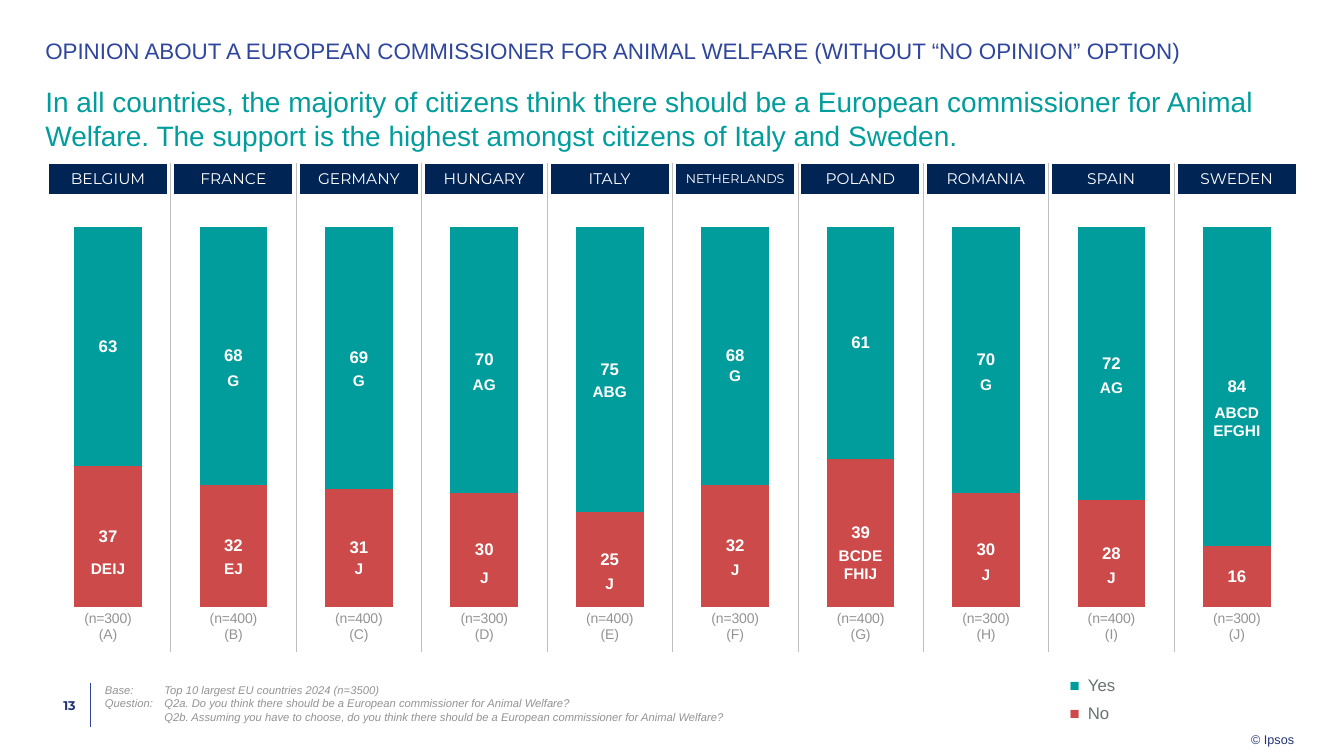
from lxml import etree
from pptx import Presentation
from pptx.chart.data import CategoryChartData
from pptx.dml.color import RGBColor
from pptx.enum.chart import XL_CHART_TYPE, XL_LABEL_POSITION, XL_TICK_LABEL_POSITION, XL_TICK_MARK
from pptx.enum.shapes import MSO_CONNECTOR
from pptx.enum.text import MSO_ANCHOR, PP_ALIGN
from pptx.oxml import parse_xml
from pptx.oxml.ns import nsdecls, qn
from pptx.util import Inches, Pt

STACKED = XL_CHART_TYPE.COLUMN_STACKED
LABEL_CENTER = XL_LABEL_POSITION.CENTER
NO_LABELS = XL_TICK_LABEL_POSITION.NONE
NO_TICK = XL_TICK_MARK.NONE
STRAIGHT = MSO_CONNECTOR.STRAIGHT
TOP, MIDDLE = MSO_ANCHOR.TOP, MSO_ANCHOR.MIDDLE
LEFT, CENTER, RIGHT = PP_ALIGN.LEFT, PP_ALIGN.CENTER, PP_ALIGN.RIGHT

WHITE = RGBColor(0xFF, 0xFF, 0xFF)
TEAL = RGBColor(0x00, 0x9D, 0x9C)
RED = RGBColor(0xCC, 0x4A, 0x4A)
NAVY = RGBColor(0x00, 0x25, 0x54)
INDIGO = RGBColor(0x23, 0x34, 0x75)
BLUE = RGBColor(0x2F, 0x46, 0x9C)
GREY = RGBColor(0x93, 0x93, 0x93)
SLATE = RGBColor(0x69, 0x72, 0x72)
RULE = RGBColor(0xBF, 0xBF, 0xBF)

# Country, sample size, yes %, no %, and (top, lines) of the significance letters
COUNTRIES = [
    ("BELGIUM", 300, 63, 37, None, (5.54, ["DEIJ"])),
    ("FRANCE", 400, 68, 32, (3.68, ["G"]), (5.54, ["EJ"])),
    ("GERMANY", 400, 69, 31, (3.68, ["G"]), (5.54, ["J"])),
    ("HUNGARY", 300, 70, 30, (3.72, ["AG"]), (5.63, ["J"])),
    ("ITALY", 400, 75, 25, (3.79, ["ABG"]), (5.69, ["J"])),
    ("NETHERLANDS", 300, 68, 32, (3.63, ["G"]), (5.55, ["J"])),
    ("POLAND", 400, 61, 39, None, (5.41, ["BCDE", "FHIJ"])),
    ("ROMANIA", 300, 70, 30, (3.72, ["G"]), (5.6, ["J"])),
    ("SPAIN", 400, 72, 28, (3.75, ["AG"]), (5.63, ["J"])),
    ("SWEDEN", 300, 84, 16, (3.99, ["ABCD", "EFGHI"]), None),
]
MARGIN, WIDTH = 0.45, 12.44
COL_W = WIDTH / len(COUNTRIES)


def style_font(font, size, color, name="Arial", **extra):
    font.color.rgb = color
    for attr, value in {"size": Pt(size), "name": name, **extra}.items():
        setattr(font, attr, value)


def fill_text(tf, lines, fmt, align=LEFT, tab=None, line_spacing=None):
    for i, line in enumerate(lines):
        p = tf.paragraphs[0] if i == 0 else tf.add_paragraph()
        p.alignment = align
        if line_spacing:
            p.line_spacing = line_spacing
        if tab:
            tabs = etree.SubElement(p._p.get_or_add_pPr(), qn("a:tabLst"))
            etree.SubElement(tabs, qn("a:tab"), pos=str(Inches(tab)), algn="l")
        r = p.add_run()
        r.text = line
        style_font(r.font, **fmt)


def add_text(slide, box, lines, fmt, insets=(0, 0, 0, 0), anchor=TOP, wrap=True, **para):
    tf = slide.shapes.add_textbox(*map(Inches, box)).text_frame
    tf.word_wrap, tf.vertical_anchor = wrap, anchor
    for side, inset in zip(("left", "top", "right", "bottom"), insets):
        setattr(tf, f"margin_{side}", Inches(inset))
    fill_text(tf, lines, fmt, **para)


def add_line(slide, x, top, bottom, color):
    line = slide.shapes.add_connector(STRAIGHT, *map(Inches, (x, top, x, bottom)))
    line.line.color.rgb, line.line.width = color, Pt(0.5)
    etree.SubElement(line._element.spPr, qn("a:effectLst"))


def add_plain_table(slide, box, rows, cols):
    table = slide.shapes.add_table(rows, cols, *map(Inches, box)).table
    table.first_row = table.horz_banding = False
    return table


def fill_cell(cell, text, fmt, align, side_inset):
    cell.margin_left = cell.margin_right = Inches(side_inset)
    cell.margin_top = cell.margin_bottom = 0
    cell.vertical_anchor = MIDDLE
    fill_text(cell.text_frame, [text], fmt, align)


def add_headings(slide, left, top, width):
    add_text(slide, (left, top, width, 0.42),
             ["OPINION ABOUT A EUROPEAN COMMISSIONER FOR ANIMAL WELFARE (WITHOUT “NO OPINION” OPTION)"],
             dict(size=16, color=BLUE), line_spacing=0.9)
    add_text(slide, (left, top + 0.44, width, 0.79),
             ["In all countries, the majority of citizens think there should be a European commissioner "
              "for Animal Welfare. The support is the highest amongst citizens of Italy and Sweden."],
             dict(size=20, color=TEAL))


def add_chart(slide, box):
    data = CategoryChartData()
    data.categories = [f"(n={row[1]})\n({letter})" for row, letter in zip(COUNTRIES, "ABCDEFGHIJ")]
    data.add_series("No", [row[3] for row in COUNTRIES])
    data.add_series("Yes", [row[2] for row in COUNTRIES])
    chart = slide.shapes.add_chart(STACKED, *map(Inches, box), data).chart
    chart.has_legend = chart.has_title = False
    style_font(chart.font, 10, GREY)
    for axis in (chart.category_axis, chart.value_axis):
        axis.major_tick_mark = axis.minor_tick_mark = NO_TICK
        axis.has_major_gridlines = False
        axis.format.line.fill.background()
    style_font(chart.category_axis.tick_labels.font, 10, GREY)
    chart.value_axis.minimum_scale, chart.value_axis.maximum_scale = 0, 100
    chart.value_axis.tick_label_position = NO_LABELS

    plot = chart.plots[0]
    plot.gap_width, plot.overlap, plot.vary_by_categories = 85, 100, False
    for series, color in zip(plot.series, (RED, TEAL)):
        series.format.fill.solid()
        series.format.fill.fore_color.rgb = color
        labels = series.data_labels
        labels.show_value, labels.position = True, LABEL_CENTER
        labels.number_format, labels.number_format_is_linked = "0;0;", False
        style_font(labels.font, 12, WHITE, bold=True)

    # Plot area spans the full width and leaves a strip for the category labels
    area = chart._chartSpace.chart.plotArea
    for old in area.findall(qn("c:layout")):
        area.remove(old)
    area.insert(0, parse_xml(
        f'<c:layout {nsdecls("c")}><c:manualLayout><c:layoutTarget val="inner"/>'
        '<c:xMode val="edge"/><c:yMode val="edge"/><c:x val="0"/><c:y val="0"/>'
        '<c:w val="1"/><c:h val="0.896"/></c:manualLayout></c:layout>'))


def add_country_header(slide, box):
    table = add_plain_table(slide, box, 1, len(COUNTRIES))
    for cell, row in zip(table.rows[0].cells, COUNTRIES):
        size = 9 if len(row[0]) > 8 else 11
        fill_cell(cell, row[0], dict(size=size, color=WHITE, name="Montserrat"), CENTER, 0.08)
        tcPr = cell._tc.get_or_add_tcPr()
        for side in ("lnL", "lnR"):
            tcPr.append(parse_xml(
                f'<a:{side} {nsdecls("a")} w="{Pt(6)}"><a:solidFill>'
                f'<a:srgbClr val="{WHITE}"/></a:solidFill></a:{side}>'))
        cell.fill.solid()
        cell.fill.fore_color.rgb = NAVY


def add_significance(slide, left):
    for col, row in enumerate(COUNTRIES):
        for mark in filter(None, row[4:]):
            top, lines = mark
            add_text(slide, (left + col * COL_W, top, COL_W, 0.19 * len(lines)), lines,
                     dict(size=11, color=WHITE, bold=True), anchor=MIDDLE, align=CENTER)


def add_legend(slide, box):
    table = add_plain_table(slide, box, 2, 2)
    table.columns[0].width, table.columns[1].width = Inches(0.36), Inches(box[2] - 0.36)
    for row, (name, color) in zip(table.rows, (("Yes", TEAL), ("No", RED))):
        for cell, text, tint, align in zip(row.cells, ("■", name), (color, SLATE), (RIGHT, LEFT)):
            fill_cell(cell, text, dict(size=12, color=tint), align, 0.04)
            cell.fill.background()


def add_footer(slide, left, top, height):
    add_text(slide, (left, top, 0.45, height), ["13"],
             dict(size=9, color=INDIGO, name="Montserrat", bold=True),
             insets=(0, 0, 0.15, 0), anchor=MIDDLE, align=RIGHT)
    add_line(slide, left + 0.45, top, top + height, BLUE)
    add_text(slide, (left + 0.59, top, 9, height),
             ["Base:\tTop 10 largest EU countries 2024 (n=3500)",
              "Question:\tQ2a. Do you think there should be a European commissioner for Animal Welfare?",
              "\tQ2b. Assuming you have to choose, do you think there should be a European "
              "commissioner for Animal Welfare?"],
             dict(size=8, color=GREY, italic=True), tab=0.59)
    add_text(slide, (12.41, top + 0.44, 0.43, 0.19), ["© Ipsos"],
             dict(size=9, color=INDIGO), insets=(0, 0.04, 0, 0), wrap=False)


def main():
    prs = Presentation()
    prs.slide_width, prs.slide_height = Inches(13.33), Inches(7.5)
    slide = prs.slides.add_slide(prs.slide_layouts[6])
    add_headings(slide, MARGIN, 0.4, WIDTH)
    add_chart(slide, (MARGIN, 2.25, WIDTH, 4.21))
    add_country_header(slide, (MARGIN, 1.62, WIDTH, 0.31))
    for col in range(1, len(COUNTRIES)):
        add_line(slide, MARGIN + col * COL_W, 1.62, 6.47, RULE)
    add_significance(slide, MARGIN)
    add_legend(slide, (10.39, 6.66, 1.81, 0.56))
    add_footer(slide, MARGIN, 6.78, 0.43)
    prs.save("out.pptx")


if __name__ == "__main__":
    main()
